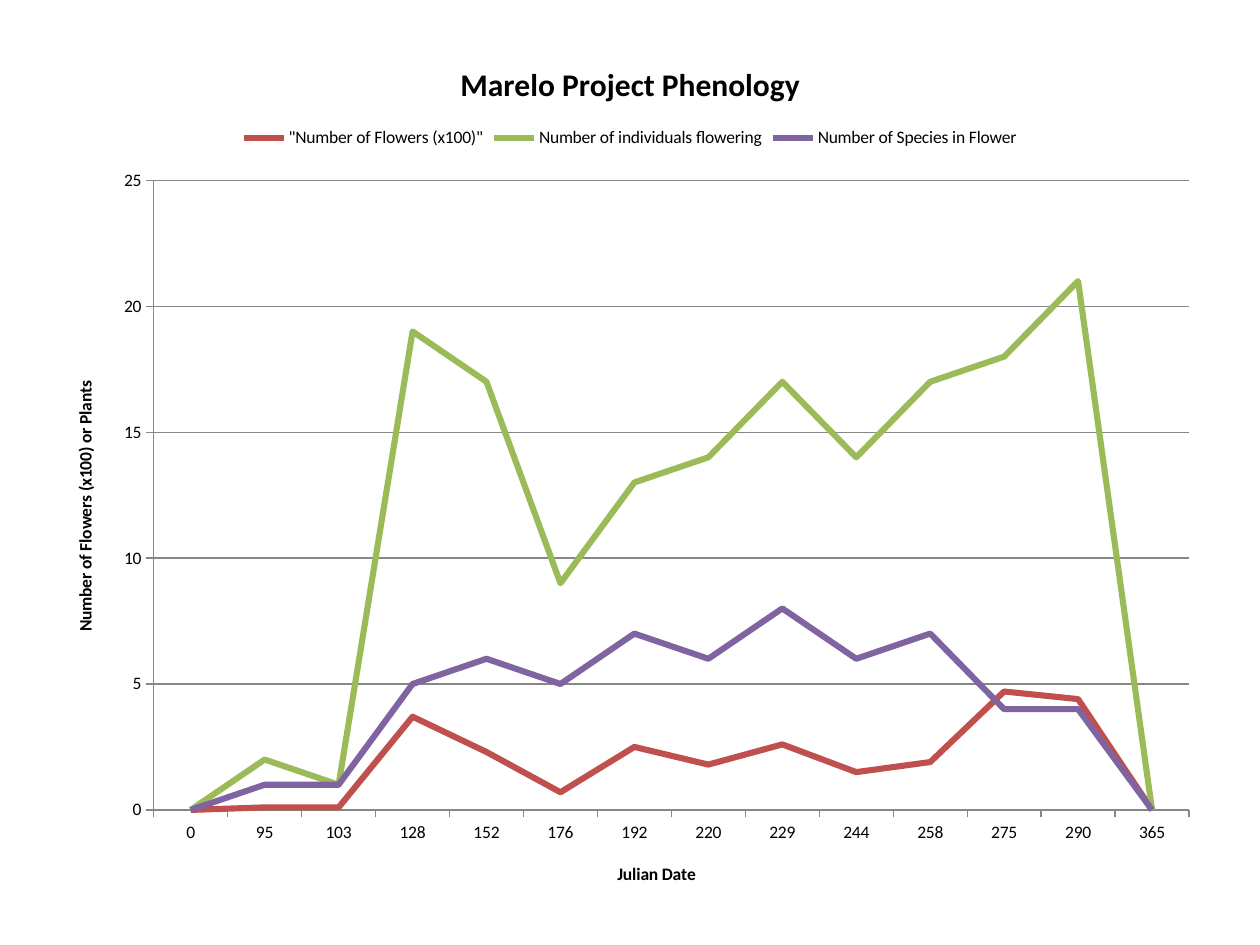
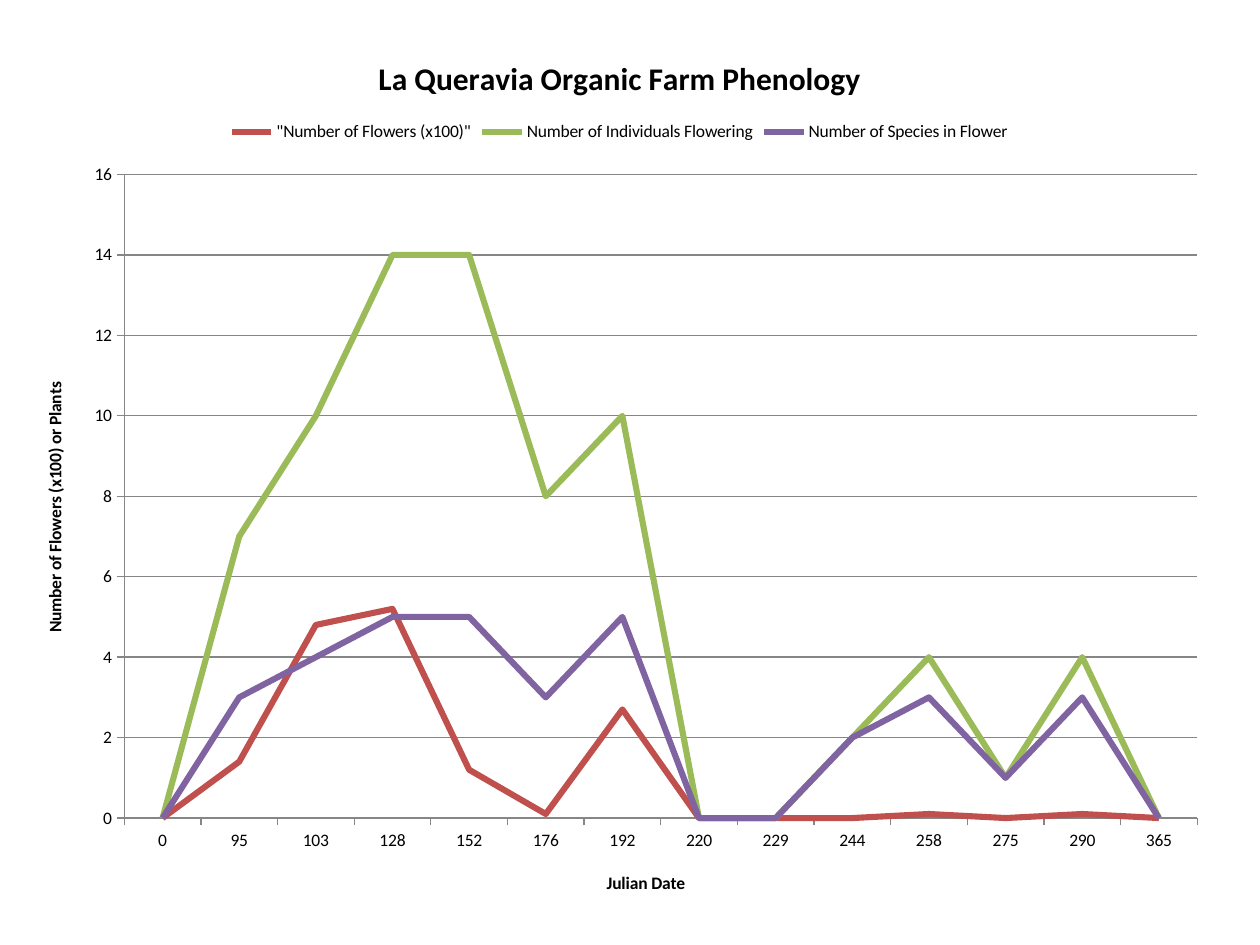
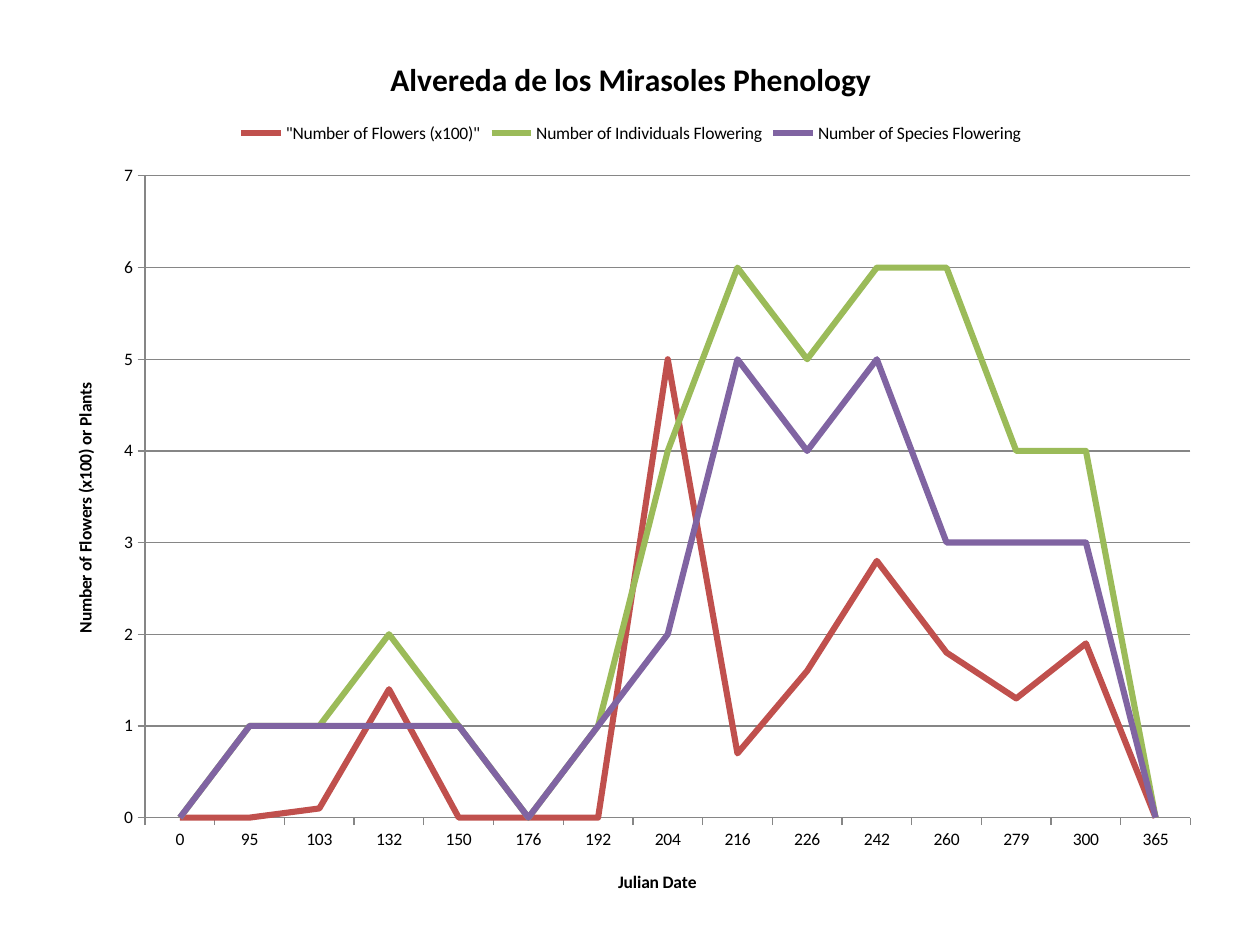
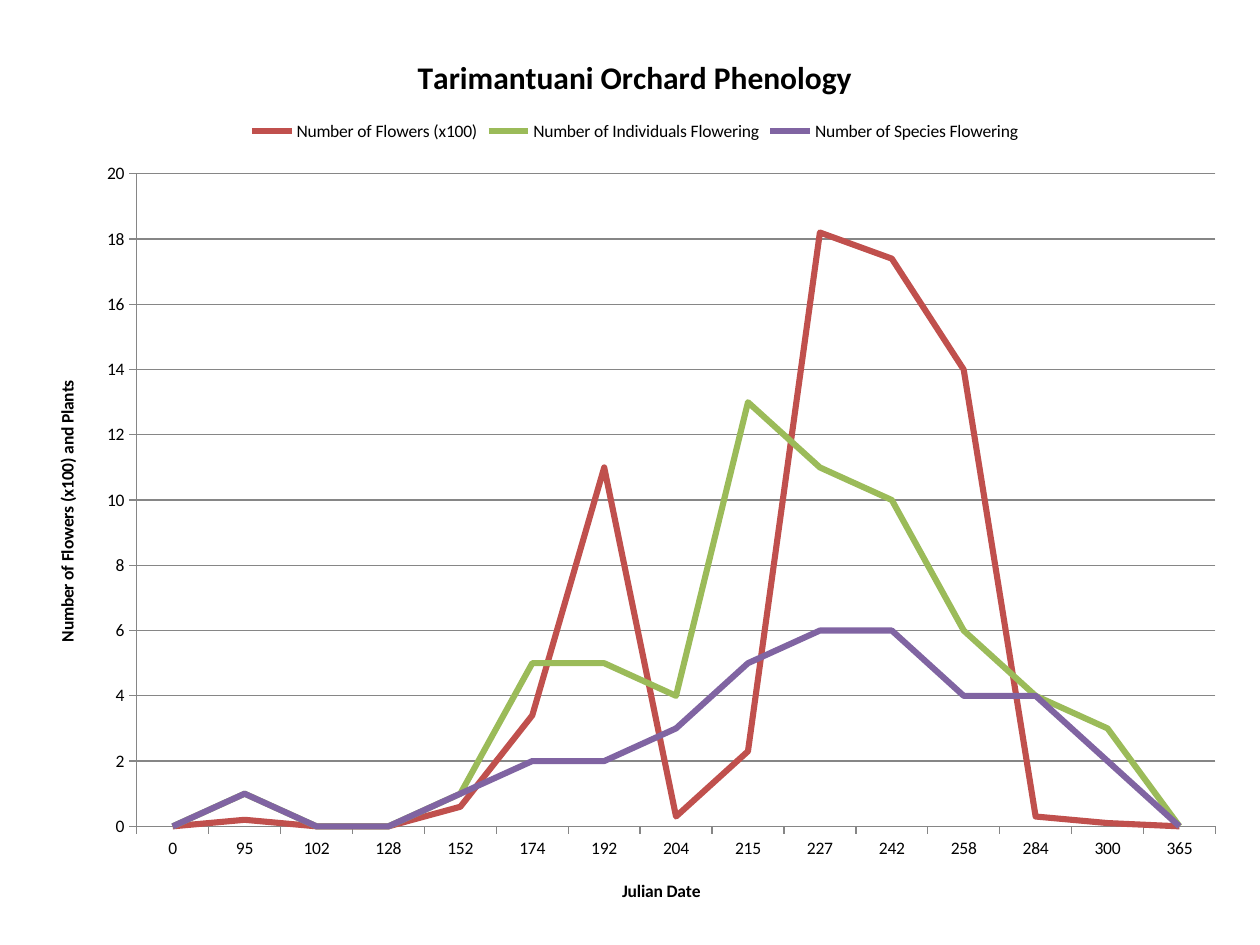
from dataclasses import dataclass

from pptx import Presentation
from pptx import util as u
from pptx.chart import axis as ax
from pptx.chart import data as cd
from pptx.chart import series as cs
from pptx.dml import color as dml
from pptx.dml import line as ln
from pptx.enum import chart as ec
from pptx.slide import Slide
from pptx.text import text as tx

FONT = "Calibri"
BLACK = "000000"
GRID_GREY = "868686"
SERIES_COLOURS = ("C0504D", "9BBB59", "8064A2")


@dataclass(frozen=True)
class Measure:
    name: str
    values: tuple[float, ...]


@dataclass(frozen=True)
class Phenology:
    title: str
    value_title: str
    frame: tuple[float, float, float, float]
    maximum: int
    step: int
    days: tuple[int, ...]
    measures: tuple[Measure, ...]


SHARED_DAYS = (0, 95, 103, 128, 152, 176, 192, 220, 229, 244, 258, 275, 290, 365)

SITES = (
    Phenology(
        "Marelo Project Phenology",
        "Number of Flowers (x100) or Plants",
        (0.97, 0.66, 23.47, 17.7),
        25,
        5,
        SHARED_DAYS,
        (
            Measure('"Number of Flowers (x100)"',
                    (0, 0.1, 0.1, 3.7, 2.3, 0.7, 2.5, 1.8, 2.6, 1.5, 1.9, 4.7, 4.4, 0)),
            Measure("Number of individuals flowering",
                    (0, 2, 1, 19, 17, 9, 13, 14, 17, 14, 17, 18, 21, 0)),
            Measure("Number of Species in Flower",
                    (0, 1, 1, 5, 6, 5, 7, 6, 8, 6, 7, 4, 4, 0)),
        ),
    ),
    Phenology(
        "La Queravia Organic Farm Phenology",
        "Number of Flowers (x100) or Plants",
        (0.36, 0.53, 24.26, 18),
        16,
        2,
        SHARED_DAYS,
        (
            Measure('"Number of Flowers (x100)"',
                    (0, 1.4, 4.8, 5.2, 1.2, 0.1, 2.7, 0, 0, 0, 0.1, 0, 0.1, 0)),
            Measure("Number of Individuals Flowering",
                    (0, 7, 10, 14, 14, 8, 10, 0, 0, 2, 4, 1, 4, 0)),
            Measure("Number of Species in Flower",
                    (0, 3, 4, 5, 5, 3, 5, 0, 0, 2, 3, 1, 3, 0)),
        ),
    ),
    Phenology(
        "Alvereda de los Mirasoles Phenology",
        "Number of Flowers (x100) or Plants",
        (0.97, 0.56, 23.5, 17.96),
        7,
        1,
        (0, 95, 103, 132, 150, 176, 192, 204, 216, 226, 242, 260, 279, 300, 365),
        (
            Measure('"Number of Flowers (x100)"',
                    (0, 0, 0.1, 1.4, 0, 0, 0, 5, 0.7, 1.6, 2.8, 1.8, 1.3, 1.9, 0)),
            Measure("Number of Individuals Flowering",
                    (0, 1, 1, 2, 1, 0, 1, 4, 6, 5, 6, 6, 4, 4, 0)),
            Measure("Number of Species Flowering",
                    (0, 1, 1, 1, 1, 0, 1, 2, 5, 4, 5, 3, 3, 3, 0)),
        ),
    ),
    Phenology(
        "Tarimantuani Orchard Phenology",
        "Number of Flowers (x100) and Plants",
        (0.61, 0.51, 24.38, 18.19),
        20,
        2,
        (0, 95, 102, 128, 152, 174, 192, 204, 215, 227, 242, 258, 284, 300, 365),
        (
            Measure("Number of Flowers (x100)",
                    (0, 0.2, 0, 0, 0.6, 3.4, 11, 0.3, 2.3, 18.2, 17.4, 14, 0.3, 0.1, 0)),
            Measure("Number of Individuals Flowering",
                    (0, 1, 0, 0, 1, 5, 5, 4, 13, 11, 10, 6, 4, 3, 0)),
            Measure("Number of Species Flowering",
                    (0, 1, 0, 0, 1, 2, 2, 3, 5, 6, 6, 4, 4, 2, 0)),
        ),
    ),
)


def colour(value: str) -> dml.RGBColor:
    return dml.RGBColor.from_string(value)


def style_font(font: tx.Font, size: float, bold: bool = False) -> None:
    font.name = FONT
    font.size = u.Pt(size)
    font.bold = bold
    font.color.rgb = colour(BLACK)


def style_line(line: ln.LineFormat, value: str, width: float) -> None:
    line.color.rgb = colour(value)
    line.width = u.Pt(width)


def write_title(frame: tx.TextFrame, wording: str, size: float) -> None:
    span = frame.paragraphs[0].add_run()
    span.text = wording
    style_font(span.font, size, bold=True)


def style_axis(axis: ax.CategoryAxis | ax.ValueAxis, wording: str) -> None:
    write_title(axis.axis_title.text_frame, wording, 10)
    axis.major_tick_mark = ec.XL_TICK_MARK.OUTSIDE
    axis.minor_tick_mark = ec.XL_TICK_MARK.NONE
    style_font(axis.tick_labels.font, 10)
    style_line(axis.format.line, GRID_GREY, 0.75)


def style_series(series: cs.LineSeries, value: str) -> None:
    series.smooth = False
    series.marker.style = ec.XL_MARKER_STYLE.NONE
    style_line(series.format.line, value, 3.5)


def draw_phenology(page: Slide, site: Phenology) -> None:
    data = cd.CategoryChartData()
    data.categories = [str(day) for day in site.days]
    for measure in site.measures:
        data.add_series(measure.name, measure.values)

    left, top, width, height = map(u.Cm, site.frame)
    chart = page.shapes.add_chart(
        ec.XL_CHART_TYPE.LINE, left, top, width, height, data
    ).chart
    style_font(chart.font, 10)
    chart.has_title = True
    write_title(chart.chart_title.text_frame, site.title, 18)
    chart.chart_title.include_in_layout = False

    chart.has_legend = True
    chart.legend.position = ec.XL_LEGEND_POSITION.TOP
    chart.legend.include_in_layout = False
    style_font(chart.legend.font, 10)

    style_axis(chart.category_axis, "Julian Date")
    value_axis = chart.value_axis
    style_axis(value_axis, site.value_title)
    value_axis.minimum_scale = 0
    value_axis.maximum_scale = site.maximum
    value_axis.major_unit = site.step
    value_axis.has_major_gridlines = True
    style_line(value_axis.major_gridlines.format.line, GRID_GREY, 0.75)
    for body in chart.element.xpath(".//c:valAx/c:title//a:bodyPr"):
        body.set("rot", "-5400000")
        body.set("vert", "horz")

    plot = chart.plots[0]
    plot.vary_by_categories = False
    for series, value in zip(plot.series, SERIES_COLOURS):
        style_series(series, value)


def main() -> None:
    deck = Presentation()
    deck.slide_width = u.Cm(25.4)
    deck.slide_height = u.Cm(19.05)
    blank = deck.slide_layouts[6]
    for site in SITES:
        draw_phenology(deck.slides.add_slide(blank), site)
    deck.save("out.pptx")


if __name__ == "__main__":
    main()
